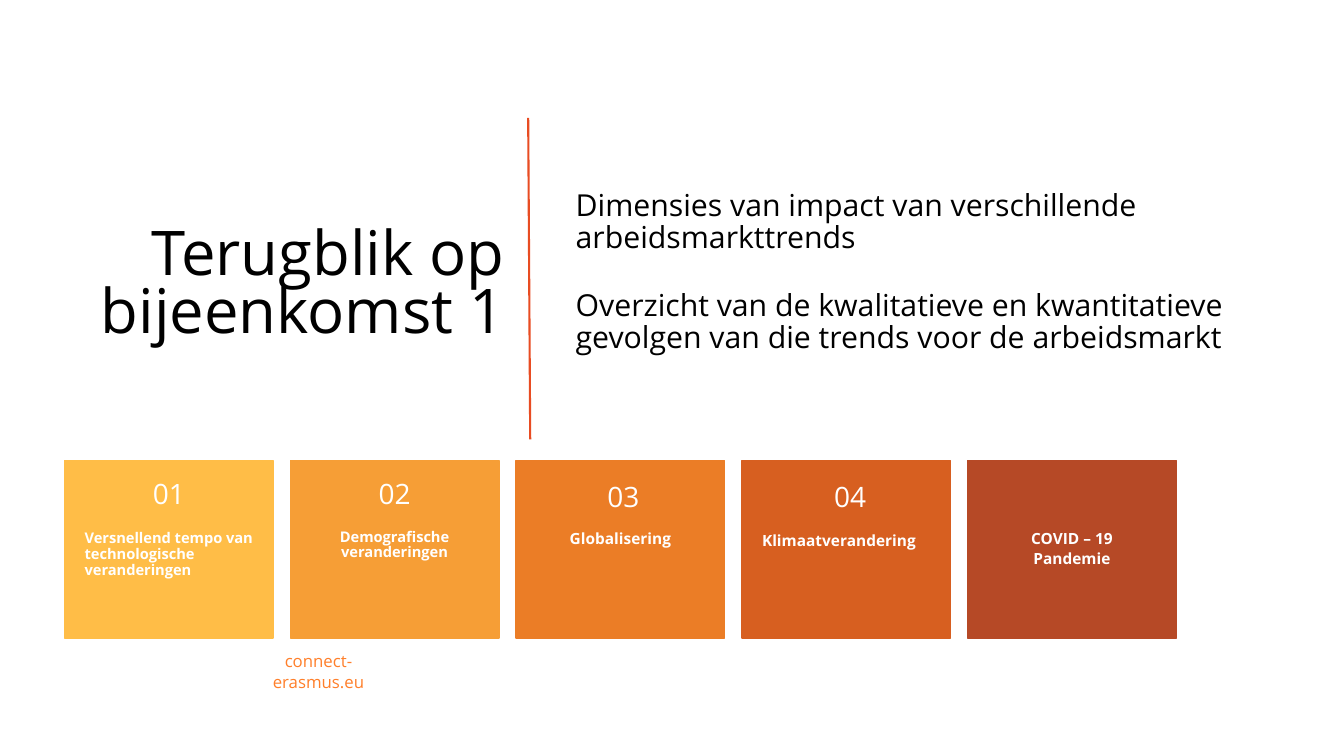
from dataclasses import dataclass

from lxml.etree import SubElement
from pptx import Presentation
from pptx.dml.color import RGBColor
from pptx.enum.shapes import MSO_CONNECTOR, MSO_SHAPE
from pptx.enum.text import MSO_ANCHOR, MSO_AUTO_SIZE, PP_ALIGN
from pptx.oxml.ns import qn
from pptx.util import Inches, Pt


@dataclass(frozen=True)
class Theme:
    font: str = "Open Sans"
    ink: str = "000000"
    paper: str = "FFFFFF"
    rule: str = "E84C22"
    link: str = "FF7F2A"
    cards: tuple = ("FFBD47", "F69E36", "EB7D26", "D75F20", "B64926")
    head: float = 44
    body: float = 21.6
    number: float = 20
    note: float = 12
    label: float = 11
    small: float = 10.5


THEME = Theme()
LEFT, MID, RIGHT = PP_ALIGN.LEFT, PP_ALIGN.CENTER, PP_ALIGN.RIGHT
TOP, CENTER, BASE = MSO_ANCHOR.TOP, MSO_ANCHOR.MIDDLE, MSO_ANCHOR.BOTTOM


def write(shape, *lines, size, color=THEME.ink, bold=False, align=LEFT,
          anchor=TOP, pad=(0.1, 0.05, 0.1, 0.05), pitch=1.0, gap=0):
    """Fill a shape with one paragraph a line; pad is in inches, gap in points."""
    frame = shape.text_frame
    frame.word_wrap = True
    frame.auto_size = MSO_AUTO_SIZE.NONE
    frame.vertical_anchor = anchor
    (frame.margin_left, frame.margin_top,
     frame.margin_right, frame.margin_bottom) = map(Inches, pad)
    for i, line in enumerate(lines):
        para = frame.add_paragraph() if i else frame.paragraphs[0]
        props = para._p.get_or_add_pPr()
        props.set("marL", "0")
        props.set("indent", "0")
        SubElement(props, qn("a:buNone"))
        para.alignment, para.line_spacing = align, pitch
        para.space_before = Pt(gap if i else 0)
        run = para.add_run()
        run.text = line
        font = run.font
        font.name, font.size, font.bold = THEME.font, Pt(size), bold
        font.color.rgb = RGBColor.from_string(color)


class Page:
    """One slide; every place is given in percent of its width and height."""

    def __init__(self, deck, theme):
        self.deck, self.theme = deck, theme
        self.slide = deck.slides.add_slide(deck.slide_layouts[1])
        self.shapes = self.slide.shapes

    def place(self, x, y, w, h):
        wide, high = self.deck.slide_width, self.deck.slide_height
        return [round(part * full / 100) for part, full in
                ((x, wide), (y, high), (w, wide), (h, high))]

    def holder(self, index, place, *lines, **style):
        shape = self.slide.placeholders[index]
        shape.left, shape.top, shape.width, shape.height = self.place(*place)
        write(shape, *lines, **style)

    def text(self, place, *lines, **style):
        write(self.shapes.add_textbox(*self.place(*place)), *lines, **style)

    def rule(self, *ends):
        line = self.shapes.add_connector(MSO_CONNECTOR.STRAIGHT, *self.place(*ends))
        line.line.color.rgb = RGBColor.from_string(self.theme.rule)
        line.line.width = Pt(1.5)
        SubElement(line._element.spPr, qn("a:effectLst"))

    def block(self, place, color):
        box = self.shapes.add_shape(MSO_SHAPE.RECTANGLE, *self.place(*place))
        box.shadow.inherit = False
        box.fill.solid()
        box.fill.fore_color.rgb = box.line.color.rgb = RGBColor.from_string(color)
        box.line.width = Pt(1)

    def card(self, x, fill, number, shift, lines, **style):
        """Draw a filled card with its label and, if any, a shifted number."""
        top, wide, high, head = 60.93, 15.53, 23.47, 9.33
        white = self.theme.paper
        self.block((x, top, wide, high), fill)
        self.text((x, top + head, wide, high - head), *lines, color=white,
                  bold=True, pad=(0.2, 0, 0.2, 0.36), **style)
        if number:
            dx, dy = shift
            self.text((x + dx, top + dy, wide, head), number, color=white,
                      size=self.theme.number, align=MID, anchor=CENTER,
                      pad=(0.2, 0.18, 0.2, 0.18), pitch=0.9)


def main():
    deck = Presentation()
    deck.slide_width, deck.slide_height = Inches(13.33), Inches(7.5)
    page = Page(deck, THEME)
    page.holder(0, (2.25, 18.27, 36.08, 27.33), "Terugblik op bijeenkomst 1",
                size=THEME.head, align=RIGHT, anchor=BASE,
                pad=(0.1, 0.05, 0.1, 0), pitch=0.78)
    page.holder(1, (42.08, 24.93, 53.1, 31.47),
                "Dimensies van impact van verschillende arbeidsmarkttrends",
                "Overzicht van de kwalitatieve en kwantitatieve gevolgen "
                "van die trends voor de arbeidsmarkt",
                size=THEME.body, anchor=BASE, pad=(0.1, 0.05, 0.1, 0.71),
                pitch=0.88, gap=26)
    page.text((17.1, 86.8, 13.2, 4), "connect-erasmus.eu", size=THEME.note,
              color=THEME.link, align=MID, anchor=CENTER,
              pad=(0.2, 0.05, 0.2, 0.05))
    page.rule(39.3, 15.6, 39.45, 58.13)

    small, label = THEME.small, THEME.label
    cards = (
        ("01", (0, 0), ["Versnellend tempo van technologische veranderingen"],
         dict(size=small, pitch=0.9)),
        ("02", (0, 0), ["Demografische veranderingen"],
         dict(size=small, align=MID, pitch=0.82)),
        ("03", (0.23, 0.27), ["Globalisering"],
         dict(size=label, align=MID, pitch=0.9)),
        ("04", (0.3, 0.27), ["Klimaatverandering"], dict(size=label)),
        (None, None, ["COVID – 19", "Pandemie"],
         dict(size=label, align=MID, pitch=0.9, gap=2.2)),
    )
    for i, (number, shift, lines, style) in enumerate(cards):
        page.card(4.8 + 16.8 * i, THEME.cards[i], number, shift, lines, **style)
    deck.save("out.pptx")


if __name__ == "__main__":
    main()
